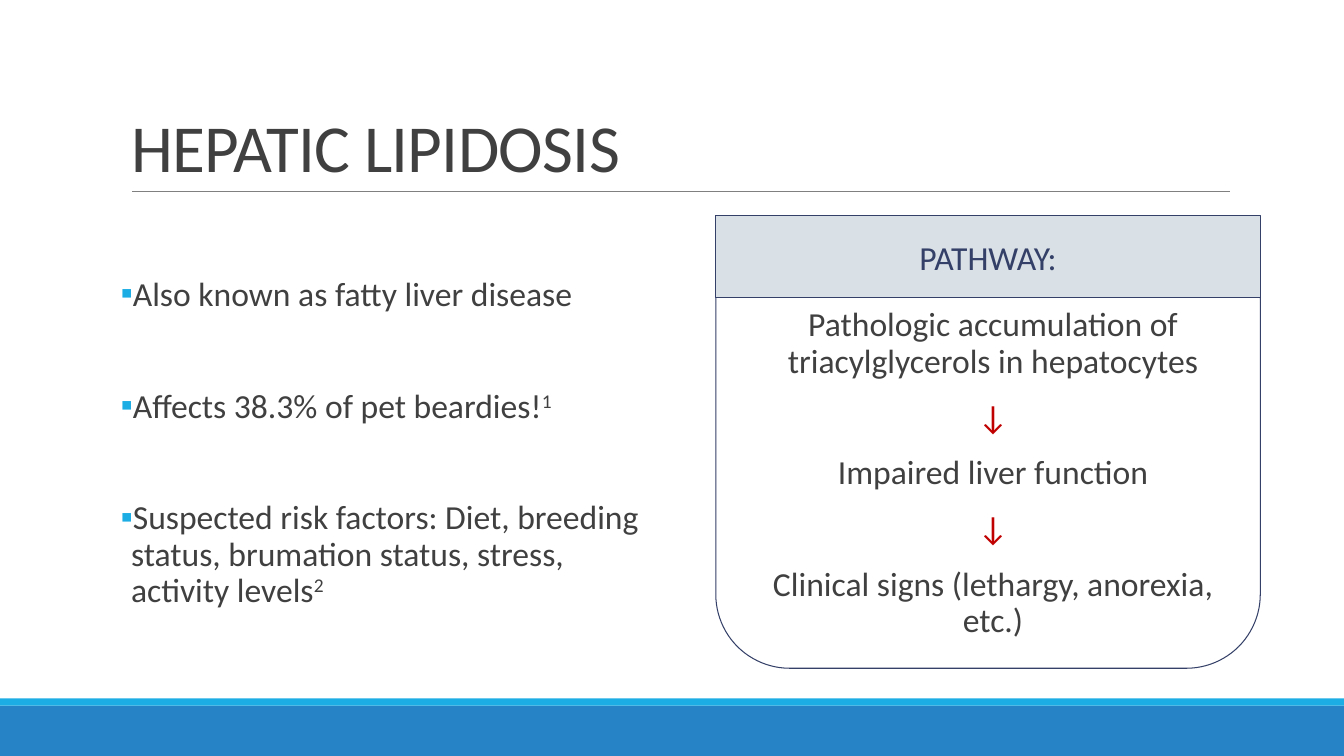
from lxml import etree
from pptx import Presentation
from pptx.dml.color import RGBColor
from pptx.enum.shapes import MSO_CONNECTOR, MSO_SHAPE
from pptx.enum.text import MSO_ANCHOR, MSO_AUTO_SIZE, PP_ALIGN
from pptx.oxml.ns import qn
from pptx.util import Inches, Pt

RECTANGLE = MSO_SHAPE.RECTANGLE
STRAIGHT = MSO_CONNECTOR.STRAIGHT
TOP, MIDDLE, BOTTOM = MSO_ANCHOR.TOP, MSO_ANCHOR.MIDDLE, MSO_ANCHOR.BOTTOM
LEFT, CENTER = PP_ALIGN.LEFT, PP_ALIGN.CENTER
NO_FIT = MSO_AUTO_SIZE.NONE

CYAN = RGBColor(0x1C, 0xAD, 0xE4)
BLUE = RGBColor(0x26, 0x83, 0xC6)
NAVY = RGBColor(0x34, 0x40, 0x68)
PALE = RGBColor(0xD9, 0xE0, 0xE6)
DARK = RGBColor(0x40, 0x40, 0x40)
GREY = RGBColor(0x80, 0x80, 0x80)
RED = RGBColor(0xC0, 0x00, 0x00)

FONT = "Calibri"
WIDTH, HEIGHT = 13.33, 7.5
MARGIN, COLUMN, GUTTER = 1.2, 5.4, 0.5
CONTENT_TOP, CONTENT_HEIGHT = 2.14, 4.4
HANGING = 0.1

FACTS = [
    ("Also known as fatty liver disease", ""),
    ("Affects 38.3% of pet beardies!", "1"),
    ("Suspected risk factors: Diet, breeding status, brumation status, "
     "stress, activity levels", "2"),
]
PATHWAY = [
    "Pathologic accumulation of triacylglycerols in hepatocytes",
    "Impaired liver function",
    "Clinical signs (lethargy, anorexia, etc.)",
]


def place(shape, box):
    shape.left, shape.top, shape.width, shape.height = map(Inches, box)


def add_run(paragraph, text, color=DARK, size=24):
    run = paragraph.add_run()
    run.text = text
    run.font.name = FONT
    run.font.size = Pt(size)
    run.font.color.rgb = color
    return run


def add_rectangle(slide, box, fill, line=None):
    shape = slide.shapes.add_shape(RECTANGLE, *map(Inches, box))
    shape.shadow.inherit = False
    shape.fill.solid()
    shape.fill.fore_color.rgb = fill
    if line is None:
        shape.line.fill.background()
    else:
        shape.line.color.rgb = line
        shape.line.width = Pt(0.75)
    return shape


def prepare_body(shape, box):
    place(shape, box)
    frame = shape.text_frame
    frame.auto_size = NO_FIT
    frame.vertical_anchor = TOP
    frame.margin_left = frame.margin_right = 0
    frame.margin_top, frame.margin_bottom = Inches(0.61), Inches(0.05)
    return frame


def add_body_paragraph(frame, index, gap, alignment, bullet=None):
    paragraph = frame.add_paragraph() if index else frame.paragraphs[0]
    paragraph.alignment = alignment
    paragraph.line_spacing = 0.9
    paragraph.space_before = Pt(gap if index else 0)
    paragraph.space_after = Pt(2)
    properties = paragraph._p.get_or_add_pPr()
    properties.set("marL", str(Inches(HANGING)))
    properties.set("indent", str(-Inches(HANGING) if bullet else 0))
    if bullet:
        color = etree.SubElement(properties, qn("a:buClr"))
        etree.SubElement(color, qn("a:srgbClr"), val=str(CYAN))
        etree.SubElement(properties, qn("a:buFont"), typeface=FONT)
        etree.SubElement(properties, qn("a:buChar"), char=bullet)
    else:
        etree.SubElement(properties, qn("a:buNone"))
    return paragraph


def add_bands(slide, box):
    left, top, width, height = box
    stripe = 0.07
    add_rectangle(slide, (left, top + stripe, width, height - stripe), BLUE)
    add_rectangle(slide, (left, top, width, stripe), CYAN)


def add_title(slide, box):
    left, top, width, height = box
    title = slide.shapes.title
    place(title, box)
    frame = title.text_frame
    frame.auto_size = NO_FIT
    frame.vertical_anchor = BOTTOM
    paragraph = frame.paragraphs[0]
    paragraph.alignment = LEFT
    paragraph.line_spacing = 0.85
    run = add_run(paragraph, "HEPATIC LIPIDOSIS", size=48)
    run.font._element.set("spc", "-50")
    base = Inches(top + height)
    rule = slide.shapes.add_connector(
        STRAIGHT, Inches(left + 0.11), base, Inches(left + width), base)
    rule.line.color.rgb = GREY
    rule.line.width = Pt(0.5)
    etree.SubElement(rule._element.spPr, qn("a:effectLst"))


def add_facts(placeholder, box):
    frame = prepare_body(placeholder, box)
    for index, (fact, reference) in enumerate(FACTS):
        paragraph = add_body_paragraph(frame, index, 52, LEFT, "▪")
        add_run(paragraph, fact)
        if reference:
            run = add_run(paragraph, reference)
            run.font._element.set("baseline", "30000")


def add_pathway(slide, placeholder, box):
    left, top, width, height = box
    frame = prepare_body(placeholder, (left, top + 0.09, width, height))
    geometry = etree.SubElement(
        placeholder._element.spPr, qn("a:prstGeom"), prst="roundRect")
    etree.SubElement(geometry, qn("a:avLst"))
    placeholder.line.color.rgb = NAVY
    placeholder.line.width = Pt(0.75)
    steps = [(PATHWAY[0], DARK)]
    for step in PATHWAY[1:]:
        steps += [("↓", RED), (step, DARK)]
    for index, (text, color) in enumerate(steps):
        paragraph = add_body_paragraph(frame, index, 12, CENTER)
        add_run(paragraph, text, color)

    header = add_rectangle(slide, (left, top, width, 0.81), PALE, NAVY)
    header.text_frame.vertical_anchor = MIDDLE
    paragraph = header.text_frame.paragraphs[0]
    paragraph.alignment = CENTER
    add_run(paragraph, "PATHWAY:", NAVY)


def main():
    presentation = Presentation()
    presentation.slide_width = Inches(WIDTH)
    presentation.slide_height = Inches(HEIGHT)
    slide = presentation.slides.add_slide(presentation.slide_layouts[3])
    facts, pathway = slide.placeholders[1], slide.placeholders[2]
    add_bands(slide, (0, 6.93, WIDTH, HEIGHT - 6.93))
    add_title(slide, (MARGIN, 0.31, 11, 1.59))
    add_facts(facts, (MARGIN, CONTENT_TOP, COLUMN, CONTENT_HEIGHT))
    add_pathway(slide, pathway, (MARGIN + COLUMN + GUTTER, CONTENT_TOP,
                                 COLUMN, CONTENT_HEIGHT))
    presentation.save("out.pptx")


if __name__ == "__main__":
    main()
